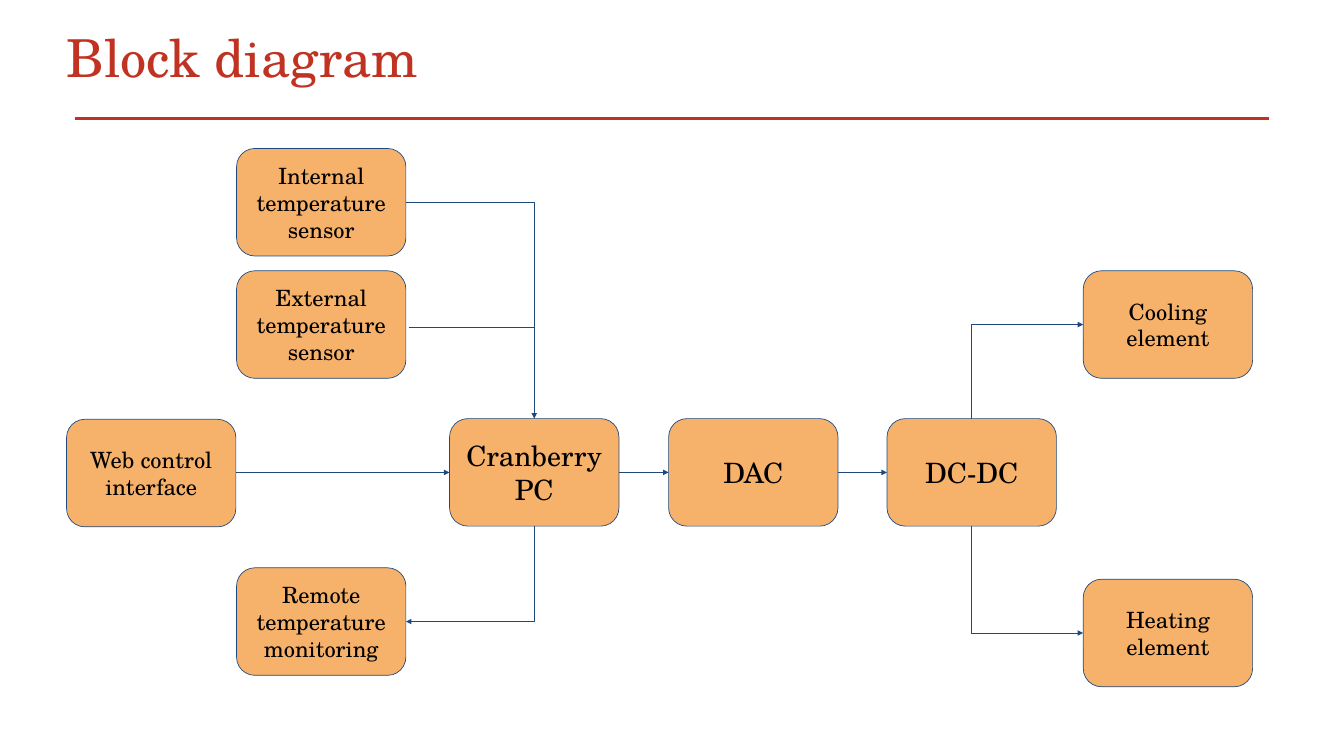
"""Build the block diagram slide of a temperature control system."""
from dataclasses import dataclass

import lxml.etree
import pptx
import pptx.dml.color
import pptx.enum.shapes
import pptx.enum.text
import pptx.oxml.ns
import pptx.util
from pptx.util import Inches

RED = pptx.dml.color.RGBColor(0xC0, 0x32, 0x21)
ORANGE = pptx.dml.color.RGBColor(0xF6, 0xB2, 0x6B)
NAVY = pptx.dml.color.RGBColor(0x1F, 0x49, 0x7D)
BLACK = pptx.dml.color.RGBColor(0x00, 0x00, 0x00)
FONT = "TeX Gyre Schola"
BOX_W, BOX_H = 2.52, 1.6
SIDE_X, PI_X, DAC_X, DCDC_X, OUT_X = 3.52, 6.69, 9.95, 13.2, 16.12
WEB_X, ROW_Y = 0.99, 6.23
INTERNAL_Y, UPPER_Y, REMOTE_Y, HEATING_Y = 2.21, 4.03, 8.45, 8.62
MID_Y, BOTTOM_Y = ROW_Y + BOX_H / 2, ROW_Y + BOX_H
SIDE_RIGHT = SIDE_X + BOX_W
PI_MID, DCDC_MID = PI_X + BOX_W / 2, DCDC_X + BOX_W / 2


@dataclass
class Block:
    text: str
    x: float
    y: float
    size: int = 24


@dataclass
class Link:
    x1: float
    y1: float
    x2: float
    y2: float
    arrow: str = "tailEnd"
    bent: bool = False


BLOCKS = [
    Block("Internal temperature sensor", SIDE_X, INTERNAL_Y),
    Block("External temperature sensor", SIDE_X, UPPER_Y),
    Block("Web control interface", WEB_X, ROW_Y + 0.01),
    Block("Remote temperature monitoring", SIDE_X, REMOTE_Y),
    Block("Cranberry PC", PI_X, ROW_Y, 30),
    Block("DAC", DAC_X, ROW_Y, 30),
    Block("DC-DC", DCDC_X, ROW_Y, 30),
    Block("Cooling element", OUT_X, UPPER_Y),
    Block("Heating element", OUT_X, HEATING_Y),
]
LINKS = [
    Link(SIDE_RIGHT, INTERNAL_Y + BOX_H / 2, PI_MID, ROW_Y, bent=True),
    Link(SIDE_RIGHT + 0.04, 4.87, PI_MID, 4.87, arrow=""),
    Link(SIDE_RIGHT, REMOTE_Y + BOX_H / 2, PI_MID, BOTTOM_Y, "headEnd", True),
    Link(WEB_X + BOX_W, MID_Y, PI_X, MID_Y),
    Link(PI_X + BOX_W, MID_Y, DAC_X, MID_Y),
    Link(DAC_X + BOX_W, MID_Y, DCDC_X, MID_Y),
    Link(OUT_X, UPPER_Y + BOX_H / 2, DCDC_MID, ROW_Y, "headEnd", True),
    Link(OUT_X, HEATING_Y + BOX_H / 2, DCDC_MID, BOTTOM_Y, "headEnd", True),
]


def add_run(p, text: str, size: int, color: pptx.dml.color.RGBColor) -> None:
    """Add one formatted run to a paragraph."""
    r = p.add_run()
    r.text = text
    r.font.name = FONT
    r.font.size = pptx.util.Pt(size)
    r.font.color.rgb = color


def set_margins(tf, margin: float) -> None:
    """Give a text frame the same margin on all sides."""
    tf.margin_left = tf.margin_right = Inches(margin)
    tf.margin_top = tf.margin_bottom = Inches(margin)


def add_title(s, text: str) -> None:
    """Move, format and fill the title placeholder."""
    sp = s.shapes.title
    sp.left, sp.top = Inches(0.99), Inches(0.56)
    sp.width, sp.height = Inches(13.28), Inches(0.75)
    tf = sp.text_frame
    set_margins(tf, 0)
    tf.word_wrap = True
    tf.auto_size = pptx.enum.text.MSO_AUTO_SIZE.NONE
    tf.vertical_anchor = pptx.enum.text.MSO_ANCHOR.TOP
    p = tf.paragraphs[0]
    p.alignment = pptx.enum.text.PP_ALIGN.LEFT
    p.line_spacing = 0.8
    p.space_before = pptx.util.Pt(0)
    add_run(p, text, 56, RED)


def add_block(s, block: Block) -> None:
    """Draw one rounded box with centred text."""
    sp = s.shapes.add_shape(
        pptx.enum.shapes.MSO_SHAPE.ROUNDED_RECTANGLE,
        Inches(block.x), Inches(block.y), Inches(BOX_W), Inches(BOX_H))
    sp.adjustments[0] = 0.17
    sp.shadow.inherit = False
    sp.fill.solid()
    sp.fill.fore_color.rgb = ORANGE
    sp.line.color.rgb = NAVY
    sp.line.width = pptx.util.Pt(0.75)
    tf = sp.text_frame
    set_margins(tf, 0.1)
    tf.word_wrap = True
    tf.vertical_anchor = pptx.enum.text.MSO_ANCHOR.MIDDLE
    p = tf.paragraphs[0]
    p.alignment = pptx.enum.text.PP_ALIGN.CENTER
    add_run(p, block.text, block.size, BLACK)


def add_link(s, link: Link, color: pptx.dml.color.RGBColor = NAVY,
             width: float = 0.75) -> None:
    """Draw a straight or one-bend connector, with an arrowhead if named."""
    qn = pptx.oxml.ns.qn
    kinds = pptx.enum.shapes.MSO_CONNECTOR
    sp = s.shapes.add_connector(
        kinds.ELBOW if link.bent else kinds.STRAIGHT,
        Inches(link.x1), Inches(link.y1), Inches(link.x2), Inches(link.y2))
    sp.line.color.rgb = color
    sp.line.width = pptx.util.Pt(width)
    props = sp._element.spPr
    if link.bent:
        props.find(qn("a:prstGeom")).set("prst", "bentConnector2")
    if link.arrow:
        ln = props.find(qn("a:ln"))
        lxml.etree.SubElement(ln, qn(f"a:{link.arrow}"), type="triangle")
    lxml.etree.SubElement(props, qn("a:effectLst"))


def main() -> None:
    """Build and save the slide."""
    prs = pptx.Presentation()
    prs.slide_width, prs.slide_height = Inches(20), Inches(11.25)
    s = prs.slides.add_slide(prs.slide_layouts.get_by_name("Title Only"))
    add_title(s, "Block diagram")
    add_link(s, Link(1.12, 1.76, 18.88, 1.76, arrow=""), RED, 3)
    for block in BLOCKS:
        add_block(s, block)
    for link in LINKS:
        add_link(s, link)
    prs.save("out.pptx")


if __name__ == "__main__":
    main()
